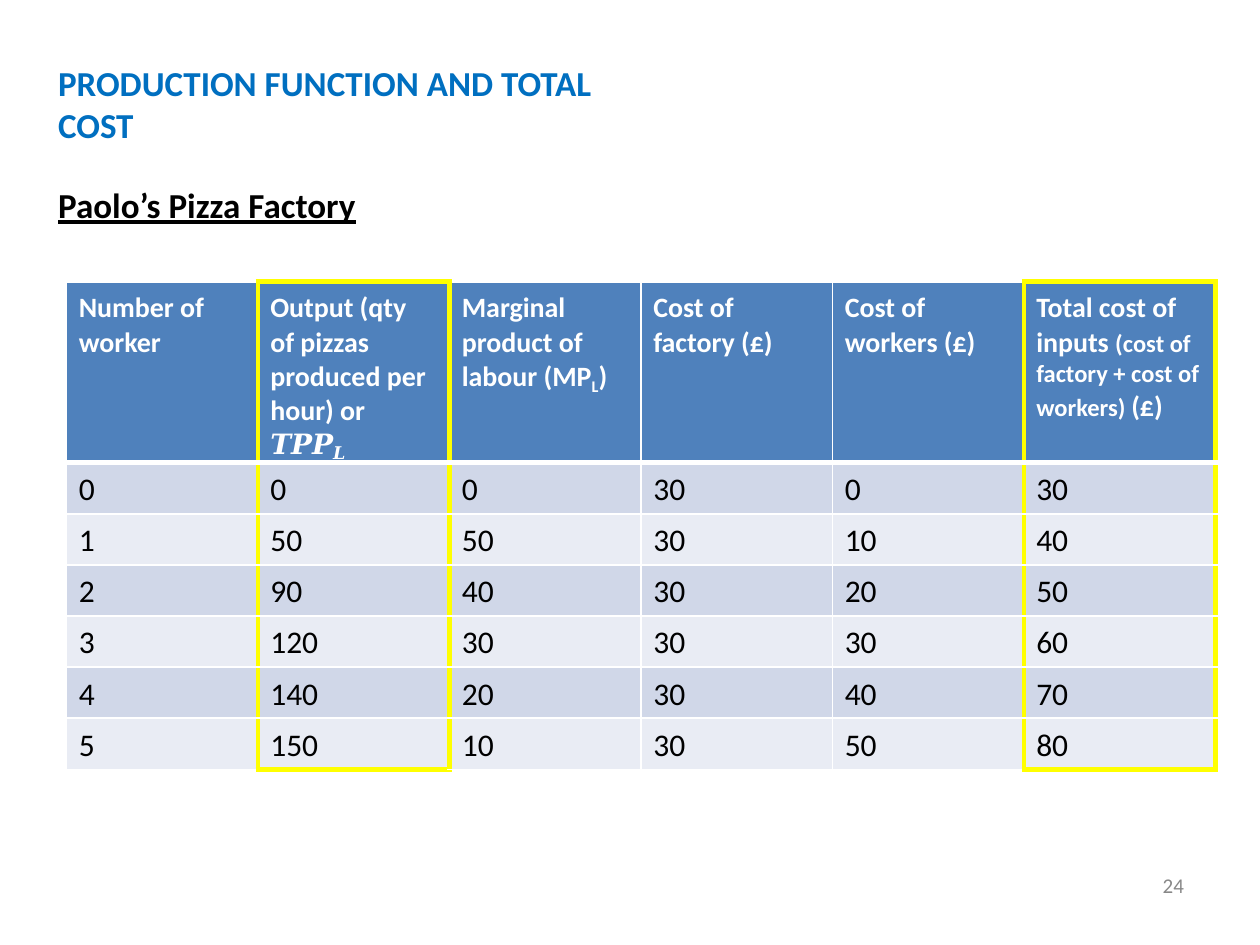
from lxml import etree
from pptx import Presentation
from pptx.dml.color import RGBColor
from pptx.enum.text import MSO_ANCHOR, MSO_AUTO_SIZE, PP_ALIGN
from pptx.oxml.ns import qn
from pptx.util import Cm, Pt

TOP = MSO_ANCHOR.TOP
LEFT = PP_ALIGN.LEFT
NO_AUTOFIT = MSO_AUTO_SIZE.NONE
TITLE_ONLY_LAYOUT = 5

BLACK, WHITE, YELLOW = "000000", "FFFFFF", "FFFF00"
HEADER_FILL = "4F81BC"
BAND_FILLS = ("D0D7E8", "E9ECF4")
HIGHLIGHTED = (1, 5)
COLUMN_WIDTH, HEADER_HEIGHT, ROW_HEIGHT = 3.86, 3.63, 1.03

SMALL = {"size": 14}
MATH = {"font": "Times New Roman", "bold": False}

# Each heading is a list of paragraphs, each paragraph a list of (text, format) runs.
HEADINGS = [
    [[("Number of", {})], [("worker", {})]],
    [[("Output (qty of pizzas produced per hour) or", {})],
     [("𝑻𝑷𝑷", MATH), ("𝑳", {**MATH, "size": 17.2, "baseline": -14})]],
    [[("Marginal product of labour (MP", {}), ("L", {"baseline": -21}), (")", {})]],
    [[("Cost of", {})], [("factory (£)", {})]],
    [[("Cost of", {})], [("workers (£)", {})]],
    [[("Total cost of inputs ", {}),
      ("(cost of factory + cost of workers) ", SMALL), ("(£)", {})]],
]
OUTPUT_BY_WORKERS = [0, 50, 90, 120, 140, 150]
FACTORY_COST, WAGE = 30, 10


def rgb(hex_colour):
    return RGBColor.from_string(hex_colour)


def add_run(paragraph, text, size=16, colour=BLACK, bold=False, underline=False,
            font="Calibri", baseline=0):
    """Add formatted text; baseline is a shift in percent, negative for subscript."""
    run = paragraph.add_run()
    run.text = text
    run.font.name = font
    run.font.size = Pt(size)
    run.font.bold = bold
    run.font.underline = underline
    run.font.color.rgb = rgb(colour)
    if baseline:
        run.font._element.set("baseline", str(baseline * 1000))


def set_frame(frame, top_margin):
    frame.word_wrap = True
    frame.auto_size = NO_AUTOFIT
    frame.vertical_anchor = TOP
    frame.margin_left = frame.margin_right = frame.margin_bottom = 0
    frame.margin_top = Cm(top_margin)


def add_title(slide):
    title = slide.shapes.title
    title.left, title.top, title.width, title.height = Cm(1.14), Cm(1.17), Cm(12.47), Cm(2.54)
    frame = title.text_frame
    set_frame(frame, top_margin=0.06)
    frame.margin_left = Cm(0.03)
    topic, example = frame.paragraphs[0], frame.add_paragraph()
    topic.alignment = example.alignment = LEFT
    example.space_before = Pt(22)
    add_run(topic, "PRODUCTION FUNCTION AND TOTAL COST", size=20, colour="006FC0", bold=True)
    add_run(example, "Paolo’s Pizza Factory", size=20, bold=True, underline=True)


def add_page_number(slide, number):
    box = slide.shapes.add_textbox(Cm(23.34), Cm(16.89), Cm(0.81), Cm(1.55))
    set_frame(box.text_frame, top_margin=0.69)
    box.text_frame.margin_left = Cm(0.1)
    add_run(box.text_frame.paragraphs[0], str(number), size=12, colour="888888")


def set_border(cell, side, colour, width):
    line = etree.SubElement(cell._tc.get_or_add_tcPr(), qn(f"a:ln{side}"), w=str(Pt(width)))
    fill = etree.SubElement(line, qn("a:solidFill"))
    etree.SubElement(fill, qn("a:srgbClr"), val=colour)


def vertical_edge(left_column):
    """Border between left_column and the column after it."""
    if left_column in HIGHLIGHTED or left_column + 1 in HIGHLIGHTED:
        return YELLOW, 3
    return WHITE, 1


def horizontal_edge(row, column, row_count):
    """Border above the given row."""
    if column in HIGHLIGHTED and row in (0, row_count):
        return YELLOW, 3
    return WHITE, 3 if row == 1 else 1


def format_cell(cell, row, column, row_count):
    set_border(cell, "L", *vertical_edge(column - 1))
    set_border(cell, "R", *vertical_edge(column))
    set_border(cell, "T", *horizontal_edge(row, column, row_count))
    set_border(cell, "B", *horizontal_edge(row + 1, column, row_count))
    cell.fill.solid()
    cell.fill.fore_color.rgb = rgb(BAND_FILLS[(row - 1) % 2] if row else HEADER_FILL)
    cell.vertical_anchor = TOP
    cell.margin_left = Cm(0.25)
    cell.margin_right = Cm(0.42 if column == 1 else 0)
    cell.margin_top = Cm(0.16 if row else 0.19)
    cell.margin_bottom = 0


def fill_heading(cell, heading):
    frame = cell.text_frame
    for index, runs in enumerate(heading):
        paragraph = frame.add_paragraph() if index else frame.paragraphs[0]
        for text, style in runs:
            add_run(paragraph, text, **{"colour": WHITE, "bold": True, **style})


def cost_rows():
    previous = 0
    for workers, output in enumerate(OUTPUT_BY_WORKERS):
        labour_cost = workers * WAGE
        yield (workers, output, output - previous, FACTORY_COST, labour_cost,
               FACTORY_COST + labour_cost)
        previous = output


def add_cost_table(slide):
    rows = list(cost_rows())
    row_count, column_count = len(rows) + 1, len(HEADINGS)
    table = slide.shapes.add_table(
        row_count, column_count, Cm(1.34), Cm(5.68), Cm(COLUMN_WIDTH * column_count),
        Cm(HEADER_HEIGHT + ROW_HEIGHT * len(rows))).table
    for column in table.columns:
        column.width = Cm(COLUMN_WIDTH)
    for row, table_row in enumerate(table.rows):
        table_row.height = Cm(ROW_HEIGHT if row else HEADER_HEIGHT)
        for column, cell in enumerate(table_row.cells):
            format_cell(cell, row, column, row_count)
            if row:
                add_run(cell.text_frame.paragraphs[0], str(rows[row - 1][column]), size=18)
            else:
                fill_heading(cell, HEADINGS[column])


def main():
    presentation = Presentation()
    presentation.slide_width, presentation.slide_height = Cm(25.4), Cm(19.05)
    slide = presentation.slides.add_slide(presentation.slide_layouts[TITLE_ONLY_LAYOUT])
    add_page_number(slide, 24)
    add_title(slide)
    add_cost_table(slide)
    presentation.save("out.pptx")


if __name__ == "__main__":
    main()
